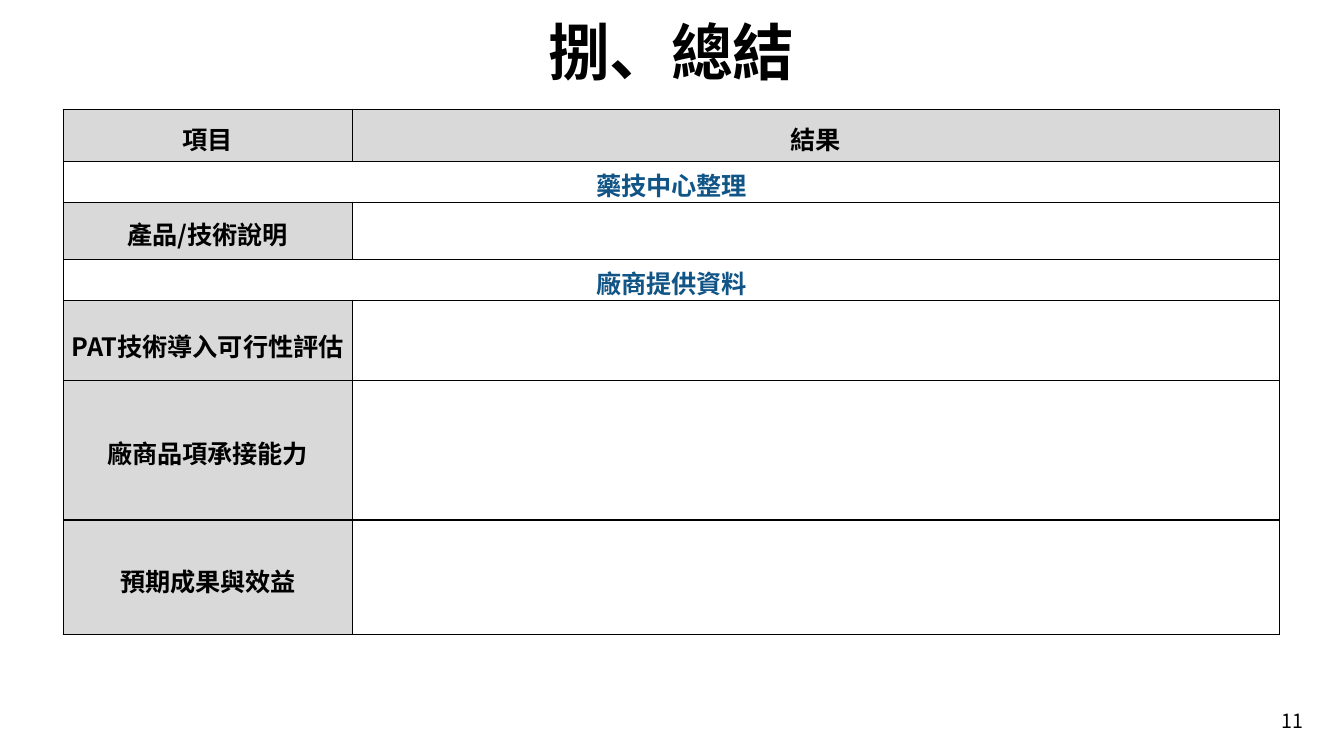
from lxml import etree
from pptx import Presentation
from pptx.dml.color import RGBColor
from pptx.enum.text import MSO_ANCHOR, PP_ALIGN
from pptx.oxml.ns import qn
from pptx.util import Pt

LEFT, CENTER = PP_ALIGN.LEFT, PP_ALIGN.CENTER
TOP, MIDDLE = MSO_ANCHOR.TOP, MSO_ANCHOR.MIDDLE

COLUMN_WIDTHS = [206.5, 662]
# Row height, space above the text, texts of the row; one text spans both columns
SUMMARY_ROWS = [
    (37.5, 8, ["項目", "結果"]),
    (29, 3, ["藥技中心整理"]),
    (41, 9.4, ["產品/技術說明", ""]),
    (29, 3, ["廠商提供資料"]),
    (57.5, 7.2, ["PAT技術導入可行性評估", ""]),
    (99.5, 38, ["廠商品項承接能力", ""]),
    (81.5, 30, ["預期成果與效益", ""]),
]


def color(value):
    return RGBColor.from_string(value)


def write(frame, text, size=18, ink="000000", bold=False, align=CENTER,
          spacing=0, font="Noto Sans CJK SC"):
    paragraph = frame.paragraphs[0]
    paragraph.alignment = align
    run = paragraph.add_run()
    run.text = text
    run.font.size = Pt(size)
    run.font.bold = bold
    run.font.name = font
    run.font.color.rgb = color(ink)
    # East Asian typeface and letter spacing
    properties = run.font._element
    properties.set("spc", str(round(spacing * 100)))
    latin = properties.find(qn("a:latin"))
    east_asian = etree.Element(qn("a:ea"), typeface=font)
    latin.addnext(east_asian)


class SummarySlide:
    header_fill = "D9D9D9"
    plain_fill = "FFFFFF"
    section_ink = "115587"
    border_ink = "000000"

    def __init__(self, presentation):
        self.slide = presentation.slides.add_slide(presentation.slide_layouts[6])

    def text(self, left, top, width, height, text, **style):
        box = self.slide.shapes.add_textbox(Pt(left), Pt(top), Pt(width), Pt(height))
        frame = box.text_frame
        frame.word_wrap = True
        frame.vertical_anchor = MIDDLE
        frame.margin_left = frame.margin_right = 0
        frame.margin_top = frame.margin_bottom = 0
        write(frame, text, **style)

    def border(self, cell):
        properties = cell._tc.get_or_add_tcPr()
        for index, side in enumerate(("a:lnL", "a:lnR", "a:lnT", "a:lnB")):
            line = etree.Element(qn(side), w=str(Pt(1)))
            fill = etree.SubElement(line, qn("a:solidFill"))
            etree.SubElement(fill, qn("a:srgbClr"), val=self.border_ink)
            properties.insert(index, line)

    def cell(self, cell, text, space_above, fill, ink, anchor):
        cell.fill.solid()
        cell.fill.fore_color.rgb = color(fill)
        self.border(cell)
        cell.margin_left = cell.margin_right = cell.margin_bottom = 0
        cell.margin_top = Pt(space_above)
        cell.vertical_anchor = anchor
        if text:
            write(cell.text_frame, text, ink=ink, bold=True, spacing=-0.1 if anchor == TOP else 0)

    def table(self, left, top, widths, rows):
        height = sum(row[0] for row in rows)
        shape = self.slide.shapes.add_table(
            len(rows), len(widths), Pt(left), Pt(top), Pt(sum(widths)), Pt(height))
        table = shape.table
        for column, width in zip(table.columns, widths):
            column.width = Pt(width)
        for index, (row_height, space_above, texts) in enumerate(rows):
            table.rows[index].height = Pt(row_height)
            is_section = len(texts) == 1
            if is_section:
                table.cell(index, 0).merge(table.cell(index, 1))
                texts = texts + [""]
            for column, text in enumerate(texts):
                fill = self.header_fill if text and not is_section else self.plain_fill
                ink = self.section_ink if is_section else "000000"
                anchor = MIDDLE if text.startswith("PAT") else TOP
                self.cell(table.cell(index, column), text,
                          space_above if text else 0, fill, ink, anchor)


def main():
    presentation = Presentation()
    presentation.slide_width = Pt(960)
    presentation.slide_height = Pt(540)
    summary = SummarySlide(presentation)

    # Title
    summary.text(391.5, 8, 182, 56, "捌、總結", size=44, bold=True, align=LEFT, spacing=-0.1)
    # Summary table
    summary.table(45.2, 78, COLUMN_WIDTHS, SUMMARY_ROWS)
    # Page number
    summary.text(915.5, 504.5, 22, 21, "11", size=14, align=LEFT, spacing=-0.2)

    presentation.save("out.pptx")


if __name__ == "__main__":
    main()
